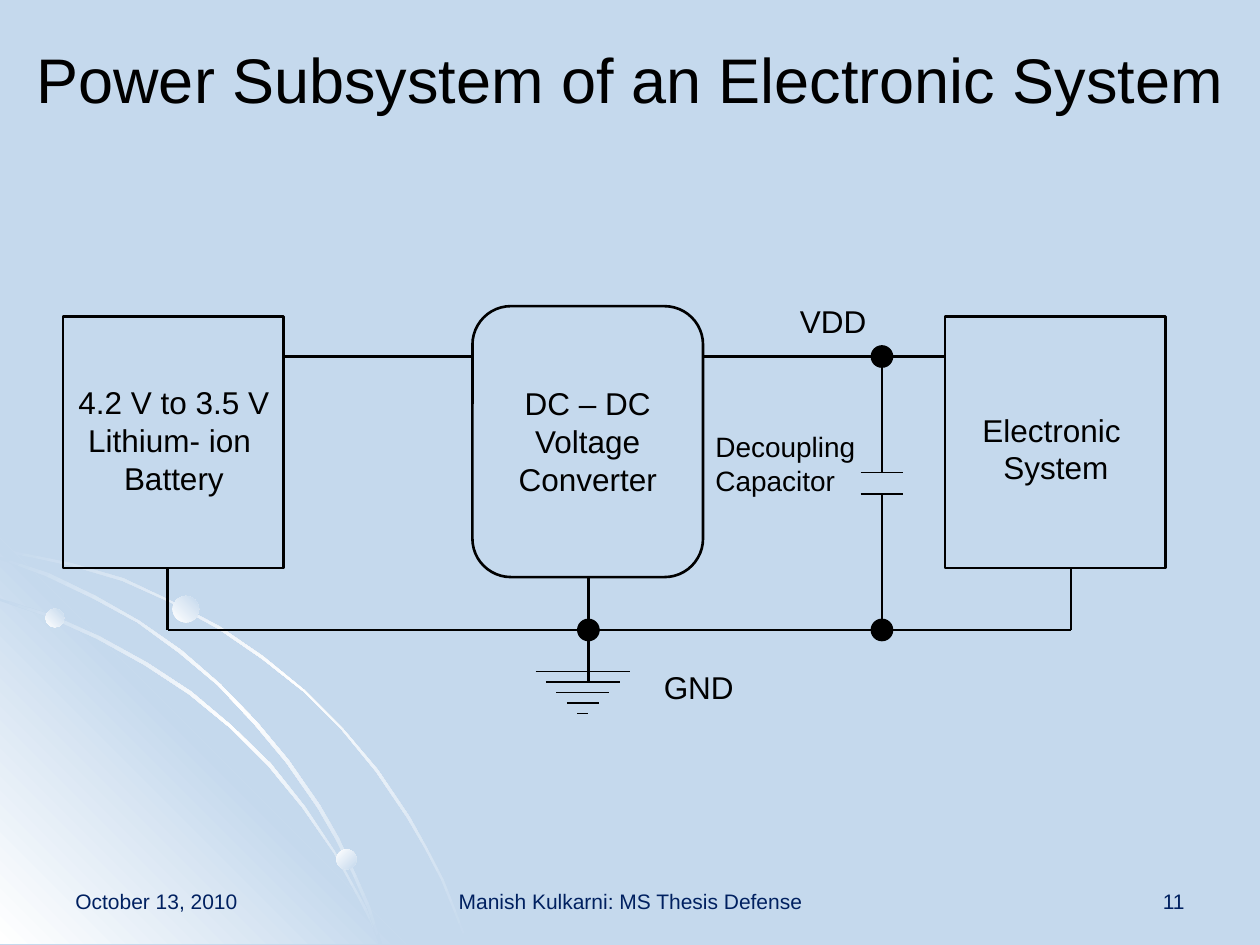
from copy import deepcopy

from lxml.etree import SubElement
from pptx import Presentation
from pptx.dml.color import RGBColor
from pptx.enum.shapes import MSO_CONNECTOR, MSO_SHAPE as Preset
from pptx.enum.text import MSO_ANCHOR, PP_ALIGN as Align
from pptx.oxml.ns import qn
from pptx.util import Cm, Pt

BLACK = RGBColor(0x00, 0x00, 0x00)
WHITE = RGBColor(0xFF, 0xFF, 0xFF)
NAVY = RGBColor(0x00, 0x20, 0x60)
SKY = RGBColor(0xC5, 0xD9, 0xED)
FONT = "Arial"

# Content: positions in inches as left, top, width, height
TITLE = "Power Subsystem of an Electronic System"
LABELS = [  # text, box, size, alignment, colour
    ("October 13, 2010", (0.5, 7, 2.33, 0.5), 12, Align.LEFT, NAVY),
    ("Manish Kulkarni: MS Thesis Defense", (3.42, 7, 3.17, 0.5), 12, Align.CENTER, NAVY),
    ("11", (7.17, 7, 2.33, 0.5), 12, Align.RIGHT, NAVY),
    ("DC – DC\nVoltage Converter", (4, 3, 1.33, 1.01), 18, Align.CENTER, BLACK),
    ("Electronic \nSystem", (7.67, 3.21, 1.42, 0.71), 18, Align.CENTER, BLACK),
    ("4.2 V to 3.5 V Lithium- ion \nBattery", (0.17, 2.99, 2.42, 1.01), 18, Align.CENTER, BLACK),
    ("Decoupling Capacitor", (5.58, 3.36, 1.5, 0.64), 16, Align.LEFT, BLACK),
    ("VDD", (6.25, 2.35, 0.83, 0.4), 18, Align.LEFT, BLACK),
    ("GND", (5.17, 5.25, 0.83, 0.4), 18, Align.LEFT, BLACK),
]
BLOCKS = [
    (Preset.RECTANGLE, (0.5, 2.51, 1.75, 2)),
    (Preset.RECTANGLE, (7.5, 2.51, 1.75, 2)),
    (Preset.ROUNDED_RECTANGLE, (3.75, 2.43, 1.83, 2.15)),
]

# Circuit levels and columns
VDD_Y, GND_Y = 2.83, 5
BATTERY_X, CONVERTER_X, CAPACITOR_X, SYSTEM_X = 1.33, 4.67, 7, 8.5
PLATES_Y = (3.75, 3.92)
WIRES = [  # from x, y to x, y
    (2.25, VDD_Y, 3.75, VDD_Y),
    (5.58, VDD_Y, 7.5, VDD_Y),
    (BATTERY_X, GND_Y, SYSTEM_X, GND_Y),
    (BATTERY_X, 4.5, BATTERY_X, GND_Y),
    (CONVERTER_X, 4.58, CONVERTER_X, 5.42),
    (SYSTEM_X, 4.5, SYSTEM_X, GND_Y),
    (CAPACITOR_X, VDD_Y, CAPACITOR_X, PLATES_Y[0]),
    (CAPACITOR_X, PLATES_Y[1], CAPACITOR_X, GND_Y),
]
NODES = [(CONVERTER_X, GND_Y), (CAPACITOR_X, GND_Y), (CAPACITOR_X, VDD_Y)]
NODE_SIZE = 0.17
GROUND_X, GROUND_Y, GROUND_BARS, GROUND_STEP = 4.625, 5.33, 5, 0.083

# Backdrop outlines, in hundredths of an inch
OUTER_ARC = [
    (57, 447), (28, 441), (0, 435), (0, 438), (28, 443), (56, 449), (97, 461),
    (135, 478), (173, 499), (208, 523), (241, 549), (271, 579), (298, 612),
    (323, 649), (337, 673), (350, 698), (360, 723), (370, 749), (372, 749),
    (362, 723), (352, 698), (339, 673), (325, 648), (300, 611), (272, 578),
    (242, 548), (209, 521), (174, 497), (136, 477), (98, 459)]
CORNER = [(322, 749), (0, 749), (0, 427)]
INNER_ARC = [
    (285, 714), (294, 732), (301, 749), (303, 749), (296, 730), (286, 712),
    (266, 676), (242, 640), (215, 606), (184, 576), (152, 549), (117, 526),
    (79, 505), (41, 488), (0, 475), (0, 477), (39, 490), (77, 507), (115, 528),
    (150, 551), (183, 578), (213, 608), (240, 641), (265, 677)]
MIDDLE_ARC = [
    (0, 442), (0, 444), (36, 457), (74, 475), (109, 494), (142, 518), (173, 544),
    (202, 575), (227, 605), (252, 641), (267, 667), (280, 694), (292, 722),
    (301, 749), (303, 749), (294, 720), (282, 693), (269, 665), (254, 639),
    (229, 603), (204, 573), (175, 543), (144, 516), (111, 493), (76, 473), (39, 455)]
GLINT, FADE = (SKY, WHITE, SKY), (WHITE, SKY, WHITE)
OUTLINES = [(OUTER_ARC, GLINT, 45), (CORNER, FADE, 315),
            (INNER_ARC, GLINT, 45), (MIDDLE_ARC, GLINT, 45)]
BEADS = [(0.36, 4.83, 0.15, 315), (2.67, 6.74, 0.16, 45), (1.37, 4.73, 0.21, 315)]


def inches(value):
    return Cm(value * 2.54)


def add_preset(slide, preset, box):
    shape = slide.shapes.add_shape(preset, *map(inches, box))
    shape.shadow.inherit = False
    return shape


def set_outline(shape, width):
    shape.line.color.rgb = BLACK
    shape.line.width = Pt(width)


def set_gradient(shape, colours, angle):
    """Spread the colours evenly along a clockwise angle."""
    shape.shadow.inherit = False
    shape.line.fill.background()
    shape.fill.gradient()
    shape.fill.gradient_angle = 360 - angle
    stop_list = shape._element.spPr.find(qn("a:gradFill")).find(qn("a:gsLst"))
    while len(stop_list) < len(colours):
        stop_list.append(deepcopy(stop_list[-1]))
    for index, (stop, colour) in enumerate(zip(shape.fill.gradient_stops, colours)):
        stop.color.rgb = colour
        stop.position = index / (len(colours) - 1)


def add_line(slide, ends, width):
    line = slide.shapes.add_connector(MSO_CONNECTOR.STRAIGHT, *map(inches, ends))
    set_outline(line, width)
    SubElement(line._element.spPr, qn("a:effectLst"))


def write_text(shape, text, size, alignment, colour):
    shape.text_frame.text = text
    shape.text_frame.word_wrap = True
    for paragraph in shape.text_frame.paragraphs:
        paragraph.alignment = alignment
        for run in paragraph.runs:
            run.font.name = FONT
            run.font.size = Pt(size)
            run.font.color.rgb = colour


def add_backdrop(slide):
    slide.background.fill.solid()
    slide.background.fill.fore_color.rgb = SKY
    for points, colours, angle in OUTLINES:
        builder = slide.shapes.build_freeform(*points[0], scale=inches(0.01))
        builder.add_line_segments(points[1:], close=True)
        set_gradient(builder.convert_to_shape(), colours, angle)
    for left, top, size, angle in BEADS:
        bead = add_preset(slide, Preset.OVAL, (left, top, size, size))
        set_gradient(bead, (WHITE, SKY), angle)


def add_circuit(slide):
    for preset, box in BLOCKS:
        block = add_preset(slide, preset, box)
        block.fill.background()
        set_outline(block, 1.5)
    for wire in WIRES:
        add_line(slide, wire, 1.5)
    for y in PLATES_Y:
        add_line(slide, (CAPACITOR_X - 0.17, y, CAPACITOR_X + 0.17, y), 1)
    # Ground bars shrink by one step at each end
    for index in range(GROUND_BARS):
        half = 0.375 - index * GROUND_STEP
        y = GROUND_Y + index * GROUND_STEP
        add_line(slide, (GROUND_X - half, y, GROUND_X + half, y), 0.75)
    for x, y in NODES:
        corner = (x - NODE_SIZE / 2, y - NODE_SIZE / 2)
        node = add_preset(slide, Preset.OVAL, (*corner, NODE_SIZE, NODE_SIZE))
        node.fill.solid()
        node.fill.fore_color.rgb = BLACK
        set_outline(node, 0.75)


def main():
    presentation = Presentation()
    presentation.slide_width, presentation.slide_height = inches(10), inches(7.5)
    slide = presentation.slides.add_slide(presentation.slide_layouts[5])
    add_backdrop(slide)

    # Title
    title = slide.shapes.title
    title.left, title.top, title.width, title.height = map(inches, (0, 0, 10, 1.25))
    write_text(title, TITLE, 36, Align.CENTER, BLACK)
    title.text_frame.vertical_anchor = MSO_ANCHOR.MIDDLE

    # Diagram, then its labels and the footer
    add_circuit(slide)
    for text, box, size, alignment, colour in LABELS:
        label = slide.shapes.add_textbox(*map(inches, box))
        write_text(label, text, size, alignment, colour)
    presentation.save("out.pptx")


if __name__ == "__main__":
    main()
